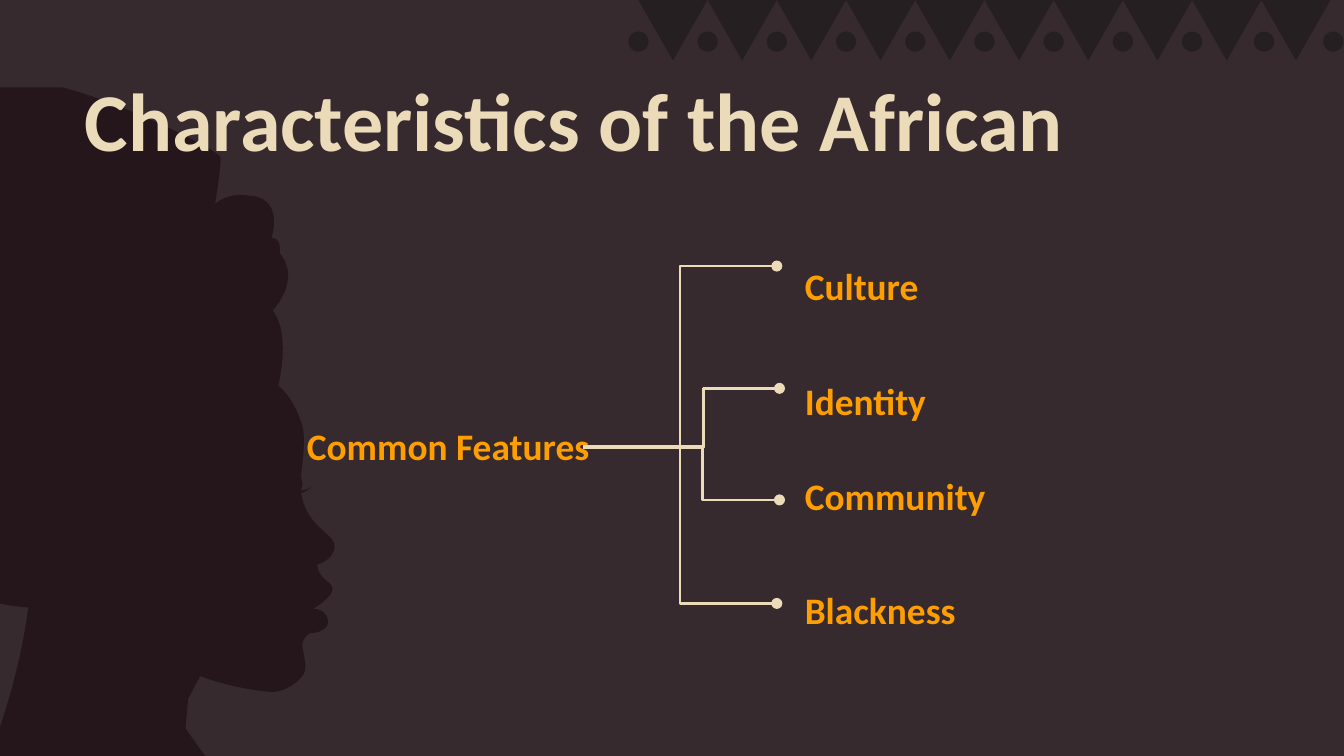
from lxml import etree
from pptx import Presentation
from pptx.dml.color import RGBColor
from pptx.enum.shapes import MSO_CONNECTOR, MSO_SHAPE
from pptx.enum.text import MSO_ANCHOR, MSO_AUTO_SIZE, PP_ALIGN
from pptx.oxml.ns import qn
from pptx.util import Inches, Pt

BACKGROUND = RGBColor(0x36, 0x2A, 0x2F)
PATTERN = RGBColor(0x25, 0x1F, 0x21)
PROFILE = RGBColor(0x25, 0x16, 0x1B)
CREAM = RGBColor(0xEB, 0xDB, 0xB9)
ORANGE = RGBColor(0xFF, 0x9E, 0x00)

# Head in profile: two numbers are a line's end, six are a Bezier curve
PROFILE_START = (0, 0.65)
PROFILE_STEPS = [
    (0, 4.49), (0.07, 4.51, 0.21, 4.52, 0.21, 4.52),
    (0.21, 4.52, 0.17, 4.91, 0, 5.41), (0, 5.63), (1.53, 5.63),
    (1.38, 5.42), (1.4, 5.2), (1.49, 5.03),
    (1.49, 5.03, 1.7, 5.12, 2.02, 5.15),
    (2.03, 5.15, 2.15, 5.15, 2.25, 5.03),
    (2.3, 4.97, 2.25, 4.86, 2.25, 4.8),
    (2.25, 4.74, 2.31, 4.71, 2.31, 4.71),
    (2.33, 4.71, 2.37, 4.71, 2.41, 4.68),
    (2.47, 4.65, 2.44, 4.53, 2.33, 4.53),
    (2.33, 4.53, 2.45, 4.46, 2.47, 4.4),
    (2.5, 4.33, 2.37, 4.33, 2.36, 4.2),
    (2.36, 4.2, 2.48, 4.17, 2.49, 4.07),
    (2.5, 3.97, 2.28, 3.93, 2.24, 3.67),
    (2.24, 3.67, 2.28, 3.66, 2.32, 3.62),
    (2.32, 3.62, 2.28, 3.65, 2.24, 3.65),
    (2.24, 3.65, 2.25, 3.62, 2.25, 3.6),
    (2.25, 3.58, 2.24, 3.56, 2.24, 3.54),
    (2.24, 3.52, 2.28, 3.27, 2.25, 3.17),
    (2.22, 3.07, 2.16, 2.94, 2.07, 2.87),
    (2.07, 2.87, 2.17, 2.49, 2.03, 2.31),
    (2.03, 2.31, 2.25, 2.08, 2.08, 1.88),
    (2.08, 1.88, 2.1, 1.77, 2.02, 1.77),
    (2.02, 1.77, 2.11, 1.51, 1.9, 1.46),
    (1.86, 1.46, 1.83, 1.45, 1.8, 1.45),
    (1.66, 1.45, 1.6, 1.52, 1.6, 1.52),
    (1.6, 1.52, 1.65, 1.22, 1.64, 1.17),
    (1.63, 1.12, 0.95, 0.78, 0.47, 0.65),
]


def trace(start, steps, pieces=10):
    """Turn lines and Bezier curves into a list of points."""
    points = [start]
    for step in steps:
        if len(step) == 2:
            points.append(step)
            continue
        ends = [points[-1], step[:2], step[2:4], step[4:]]
        for i in range(1, pieces + 1):
            t = i / pieces
            weights = ((1 - t) ** 3, 3 * t * (1 - t) ** 2, 3 * t * t * (1 - t), t ** 3)
            points.append(tuple(sum(w * end[axis] for w, end in zip(weights, ends))
                                for axis in (0, 1)))
    return points


def write(tf, text, size=20, color=ORANGE, align=PP_ALIGN.LEFT, spacing=None, after=None):
    tf.word_wrap = True
    tf.auto_size = MSO_AUTO_SIZE.NONE
    tf.vertical_anchor = MSO_ANCHOR.MIDDLE
    tf.margin_left = tf.margin_right = tf.margin_top = tf.margin_bottom = Inches(0.1)
    p = tf.paragraphs[0]
    p.alignment = align
    p.line_spacing = spacing
    p.space_after = after
    r = p.add_run()
    r.text = text
    r.font.name = "Calibri"
    r.font.size = Pt(size)
    r.font.bold = True
    r.font.color.rgb = color


class SlideBuilder:
    def __init__(self, prs):
        self.slide = prs.slides.add_slide(prs.slide_layouts[5])
        self.shapes = self.slide.shapes
        fill = self.slide.background.fill
        fill.solid()
        fill.fore_color.rgb = BACKGROUND

    def paint(self, sp, color):
        sp.shadow.inherit = False
        sp.fill.solid()
        sp.fill.fore_color.rgb = color
        sp.line.fill.background()

    def outline(self, points, color):
        points = [(Inches(x), Inches(y)) for x, y in points]
        builder = self.shapes.build_freeform(*points[0])
        builder.add_line_segments(points[1:], close=True)
        self.paint(builder.convert_to_shape(), color)

    def dot(self, x, y, size, color):
        sp = self.shapes.add_shape(MSO_SHAPE.OVAL, Inches(x - size / 2), Inches(y - size / 2),
                                   Inches(size), Inches(size))
        self.paint(sp, color)

    def title(self, text, x, y, w, h, **style):
        sp = self.shapes.title
        sp.left, sp.top, sp.width, sp.height = (Inches(v) for v in (x, y, w, h))
        # Bring the title in front of the decoration
        self.shapes._spTree.append(sp._element)
        write(sp.text_frame, text, **style)

    def label(self, text, x, y, w, h, **style):
        sp = self.shapes.add_textbox(Inches(x), Inches(y), Inches(w), Inches(h))
        write(sp.text_frame, text, **style)

    def branch(self, x1, y1, x2, y2):
        line = self.shapes.add_connector(MSO_CONNECTOR.ELBOW, Inches(x1), Inches(y1),
                                         Inches(x2), Inches(y2))
        line.line.color.rgb = CREAM
        line.line.width = Pt(1.5)
        etree.SubElement(line.line._get_or_add_ln(), qn("a:tailEnd"), type="oval")
        etree.SubElement(line._element.spPr, qn("a:effectLst"))


def main():
    # Widescreen, 16 to 9
    prs = Presentation()
    prs.slide_width = Inches(10)
    prs.slide_height = prs.slide_width * 9 // 16
    s = SlideBuilder(prs)

    # Band of teeth and dots along the top
    left, pitch, teeth = 4.75, 0.515, 10
    for i in range(teeth):
        x = left + i * pitch
        s.outline([(x, 0), (x + pitch, 0), (x + pitch / 2, 0.45)], PATTERN)
    for i in range(teeth + 1):
        nudge = 0.02 if i >= teeth - 1 else 0
        s.dot(left + i * pitch + nudge, 0.31, 0.15, PATTERN)

    # Head in profile
    s.outline(trace(PROFILE_START, PROFILE_STEPS), PROFILE)

    # Title and root of the tree
    s.title("Characteristics of the African", 0.53, 0.56, 9.56, 0.64, size=44, color=CREAM)
    s.label("Common Features", 2.12, 2.81, 2.43, 1.01, align=PP_ALIGN.CENTER)

    # Features: label top, then start and end of the branch
    features = [
        ("Culture", 1.81, (4.34, 3.33, 5.78, 1.98)),
        ("Identity", 2.66, (4.67, 3.33, 5.8, 2.89)),
        ("Community", 3.37, (4.66, 3.32, 5.8, 3.72)),
        ("Blackness", 4.22, (4.34, 3.32, 5.78, 4.49)),
    ]
    for text, top, ends in features:
        s.label(text, 5.89, top, 2.24, 0.57, spacing=1.2, after=Pt(4))
        s.branch(*ends)

    prs.save("out.pptx")


if __name__ == "__main__":
    main()
